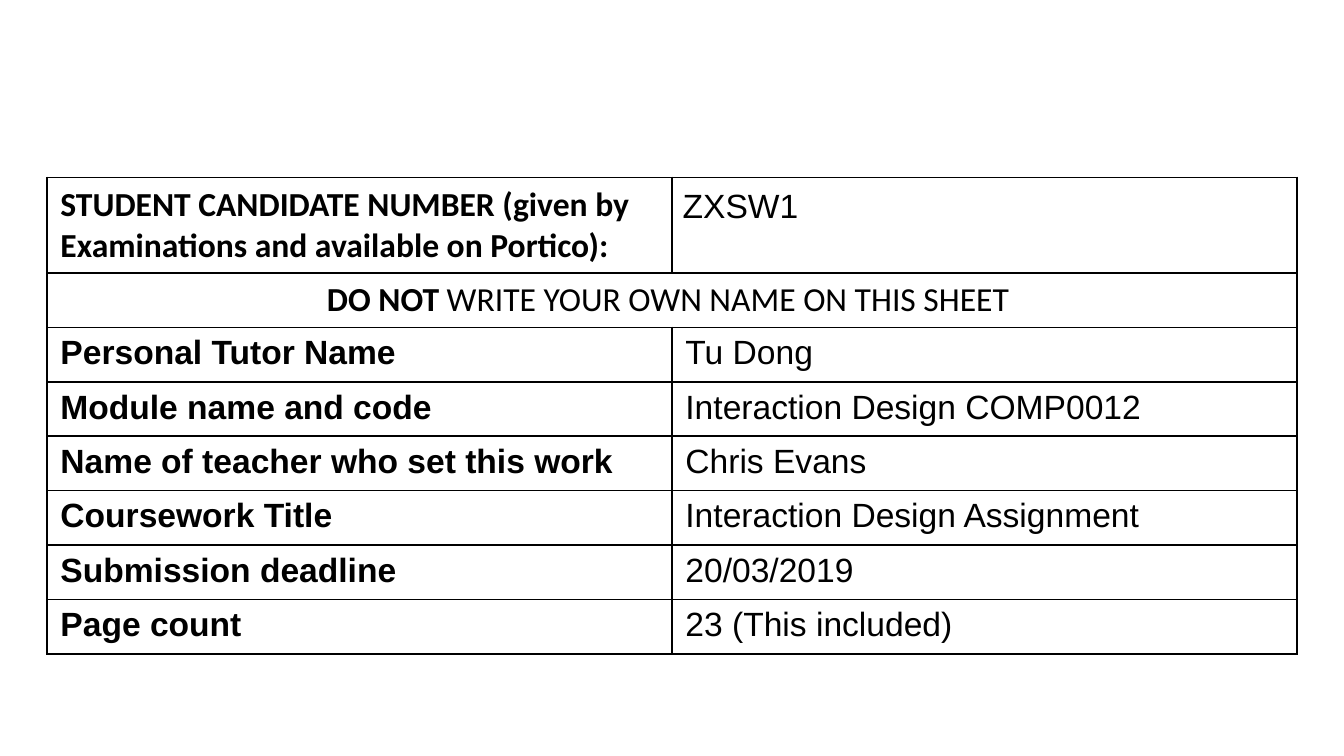
from lxml import etree
from pptx import Presentation
from pptx.dml.color import RGBColor
from pptx.enum.text import PP_ALIGN
from pptx.oxml.ns import qn
from pptx.util import Inches, Pt

CENTER = PP_ALIGN.CENTER
COLORS = {"text": "000000", "border": "000000", "background": "FFFFFF"}
HEADING_FONT, BODY_FONT = "Calibri", "Arial"
BORDER_WIDTH = Pt(1)
BLANK_LAYOUT = 6

CANDIDATE_LABEL = "STUDENT CANDIDATE NUMBER (given by Examinations and available on Portico):"
CANDIDATE_NUMBER = "ZXSW1"
NOTICE_RUNS = [("DO NOT", True), (" WRITE YOUR OWN NAME ON THIS SHEET ", False)]
DETAILS = [
    ("Personal Tutor Name", "Tu Dong"),
    ("Module name and code", "Interaction Design COMP0012"),
    ("Name of teacher who set this work", "Chris Evans"),
    ("Coursework Title", "Interaction Design Assignment"),
    ("Submission deadline", "20/03/2019"),
    ("Page count", "23 (This included)"),
]


def style_cell(cell):
    """Give a cell a plain fill, its margins and a thin border on every side."""
    cell.margin_left = cell.margin_right = Inches(0.1)
    cell.margin_top = cell.margin_bottom = Inches(0.05)
    properties = cell._tc.get_or_add_tcPr()
    for side in ("a:lnL", "a:lnR", "a:lnT", "a:lnB"):
        line = etree.SubElement(properties, qn(side), w=str(BORDER_WIDTH))
        fill = etree.SubElement(line, qn("a:solidFill"))
        etree.SubElement(fill, qn("a:srgbClr"), val=COLORS["border"])
    cell.fill.solid()
    cell.fill.fore_color.rgb = RGBColor.from_string(COLORS["background"])


def write_cell(cell, runs, font_name=BODY_FONT):
    """Write (text, bold) runs into a cell and return its paragraph."""
    paragraph = cell.text_frame.paragraphs[0]
    paragraph.font.name = font_name
    paragraph.font.size = Pt(18)
    paragraph.font.color.rgb = RGBColor.from_string(COLORS["text"])
    for text, bold in runs:
        run = paragraph.add_run()
        run.text = text
        run.font.bold = bold
    return paragraph


def add_cover_table(slide, left, top, width, height):
    """Add the table with equal rows; the first grows to hold its two lines."""
    row_count = len(DETAILS) + 2
    table = slide.shapes.add_table(row_count, 2, left, top, width, height).table
    table.first_row = table.horz_banding = False
    for cell in table.iter_cells():
        style_cell(cell)

    write_cell(table.cell(0, 0), [(CANDIDATE_LABEL, True)], HEADING_FONT)
    number_cell = table.cell(0, 1)
    number_cell.margin_left = number_cell.margin_right = Inches(0.08)
    number_cell.margin_top = number_cell.margin_bottom = Inches(0.08)
    write_cell(number_cell, [(CANDIDATE_NUMBER, False)])

    notice_cell = table.cell(1, 0)
    notice_cell.merge(table.cell(1, 1))
    write_cell(notice_cell, NOTICE_RUNS, HEADING_FONT).alignment = CENTER

    for row, (label, value) in enumerate(DETAILS, start=2):
        write_cell(table.cell(row, 0), [(label, True)])
        write_cell(table.cell(row, 1), [(value, False)])


def main():
    presentation = Presentation()
    presentation.slide_width = Inches(10)
    presentation.slide_height = presentation.slide_width * 9 // 16
    slide = presentation.slides.add_slide(presentation.slide_layouts[BLANK_LAYOUT])
    add_cover_table(slide, Inches(0.35), Inches(1.32), Inches(9.3), Inches(3.24))
    presentation.save("out.pptx")


if __name__ == "__main__":
    main()
